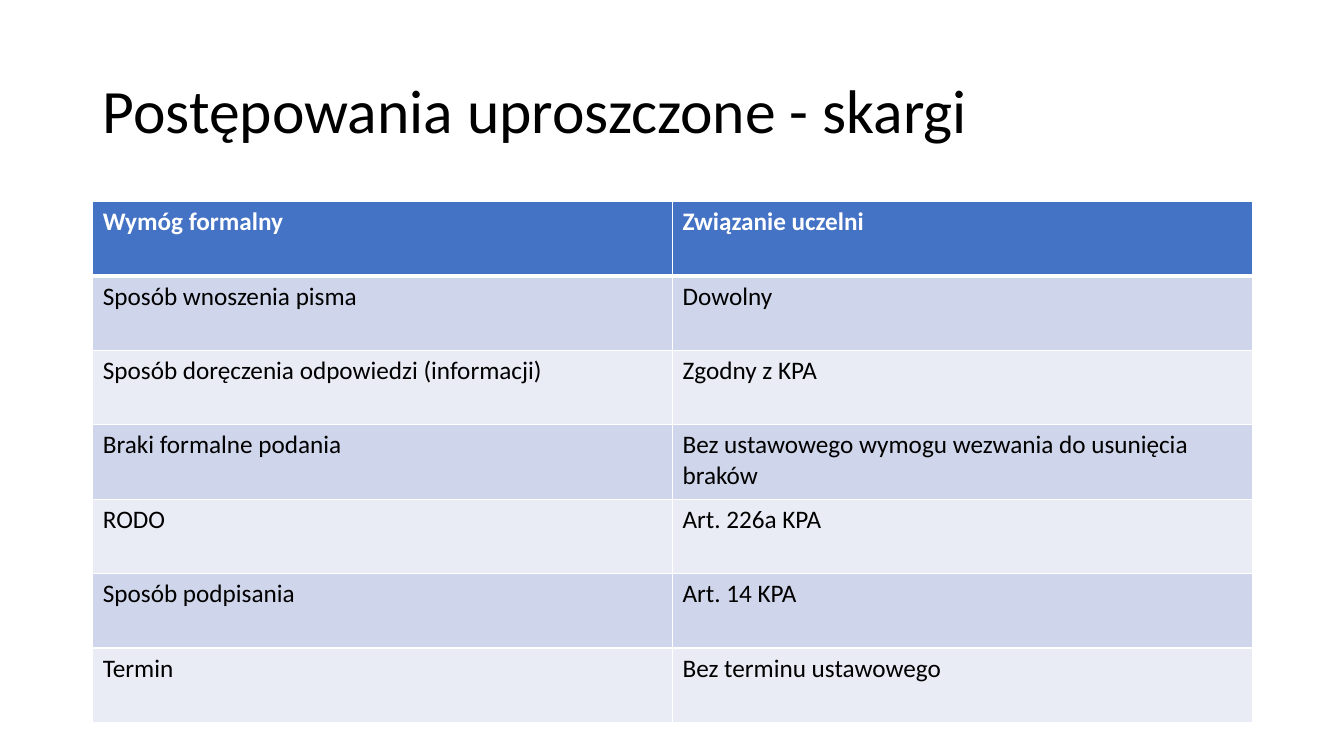
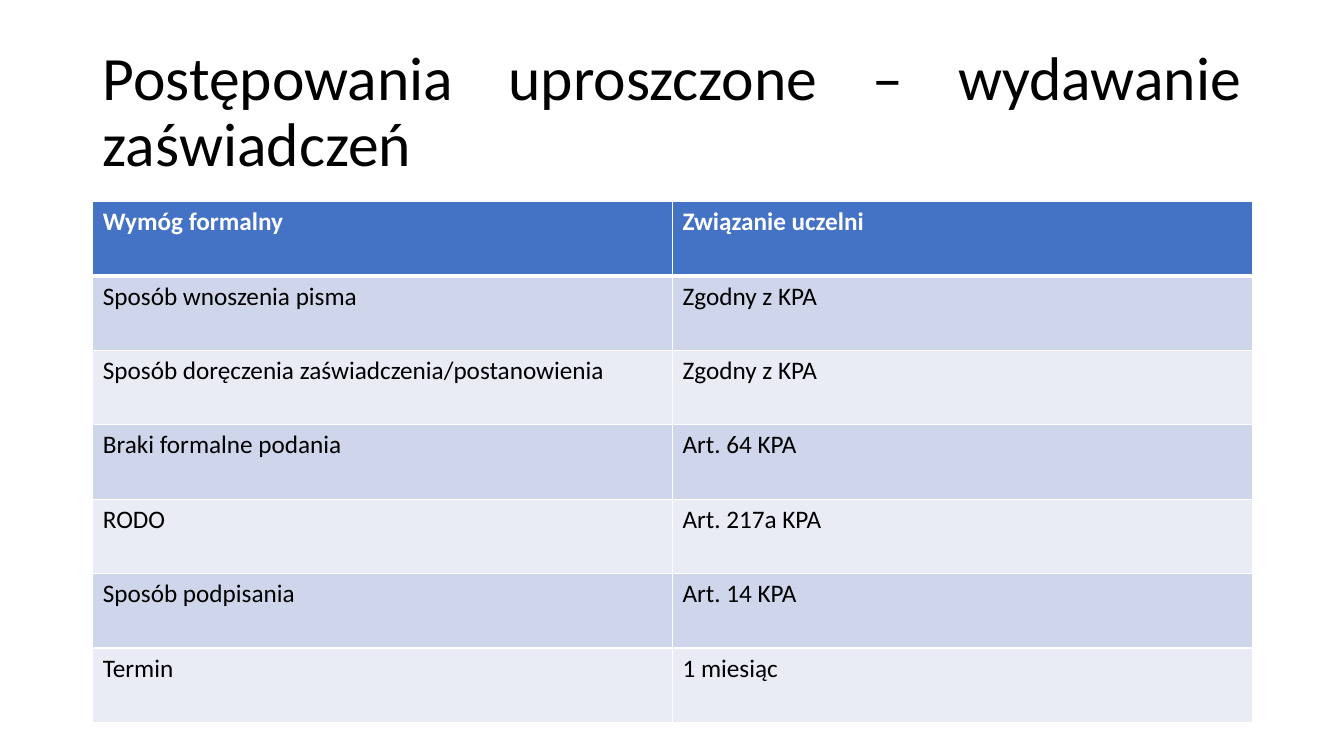
from lxml import etree
from pptx import Presentation
from pptx import util as u
from pptx.dml.color import RGBColor
from pptx.enum import text
from pptx.oxml.ns import qn

PX = 9144  # EMU per px, 100 px to the inch
FONT = "Calibri"
BLACK, WHITE = "000000", "FFFFFF"
HEADER_FILL = "4472C4"
BAND_FILLS = ("CFD5EA", "E9EBF5")
LEFT, WIDTH = 92, 1150
TITLE_TOP, TITLE_HEIGHT = 40, 145
TABLE_TOP, TABLE_HEIGHT = 200, 517
THIN, THICK = 1, 3  # cell borders in points

HEADINGS = ("Wymóg formalny", "Związanie uczelni")
COMPLAINTS = (
    ("Sposób wnoszenia pisma", "Dowolny"),
    ("Sposób doręczenia odpowiedzi (informacji)", "Zgodny z KPA"),
    ("Braki formalne podania",
     "Bez ustawowego wymogu wezwania do usunięcia braków"),
    ("RODO", "Art. 226a KPA"),
    ("Sposób podpisania", "Art. 14 KPA"),
    ("Termin", "Bez terminu ustawowego"),
)
CERTIFICATES = (
    ("Sposób wnoszenia pisma", "Zgodny z KPA"),
    ("Sposób doręczenia zaświadczenia/postanowienia", "Zgodny z KPA"),
    ("Braki formalne podania", "Art. 64 KPA"),
    ("RODO", "Art. 217a KPA"),
    ("Sposób podpisania", "Art. 14 KPA"),
    ("Termin", "1 miesiąc"),
)


def px(*lengths):
    return [u.Emu(length * PX) for length in lengths]


def color(hex_value):
    return RGBColor.from_string(hex_value)


def add_run(paragraph, words, size, hex_value, bold=False):
    run = paragraph.add_run()
    run.text = words
    font = run.font
    font.name, font.size, font.bold = FONT, u.Pt(size), bold
    font.color.rgb = color(hex_value)


def add_title(slide, words, align):
    box = slide.shapes.add_textbox(*px(LEFT, TITLE_TOP, WIDTH, TITLE_HEIGHT))
    frame = box.text_frame
    frame.word_wrap = True
    frame.vertical_anchor = text.MSO_ANCHOR.MIDDLE
    heading = frame.paragraphs[0]
    heading.alignment = align
    heading.line_spacing = 0.9
    add_run(heading, words, 44, BLACK)


def set_borders(cell, top, bottom):
    """Draw white cell edges; call before filling, as the schema orders them."""
    properties = cell._tc.get_or_add_tcPr()
    for edge, points in (("L", THIN), ("R", THIN), ("T", top), ("B", bottom)):
        line = etree.SubElement(properties, qn(f"a:ln{edge}"), w=str(u.Pt(points)))
        fill = etree.SubElement(line, qn("a:solidFill"))
        etree.SubElement(fill, qn("a:srgbClr"), val=WHITE)


def add_requirements(slide, requirements):
    rows = (HEADINGS, *requirements)
    table = slide.shapes.add_table(
        len(rows), len(HEADINGS), *px(LEFT, TABLE_TOP, WIDTH, TABLE_HEIGHT)).table
    table.horz_banding = False
    for r, row in enumerate(rows):
        is_header = r == 0
        band = HEADER_FILL if is_header else BAND_FILLS[(r - 1) % 2]
        for c, words in enumerate(row):
            cell = table.cell(r, c)
            # The thick rule lies between the header and the first row
            set_borders(cell, top=THICK if r == 1 else THIN,
                        bottom=THICK if is_header else THIN)
            cell.fill.solid()
            cell.fill.fore_color.rgb = color(band)
            add_run(cell.text_frame.paragraphs[0], words, 18,
                    WHITE if is_header else BLACK, bold=is_header)


def main():
    deck = Presentation()
    deck.slide_width, deck.slide_height = px(1333, 750)
    procedures = (
        ("Postępowania uproszczone - skargi", text.PP_ALIGN.LEFT, COMPLAINTS),
        ("Postępowania uproszczone – wydawanie zaświadczeń",
         text.PP_ALIGN.JUSTIFY, CERTIFICATES),
    )
    for title, align, requirements in procedures:
        slide = deck.slides.add_slide(deck.slide_layouts[6])
        add_title(slide, title, align)
        add_requirements(slide, requirements)
    deck.save("out.pptx")


if __name__ == "__main__":
    main()
